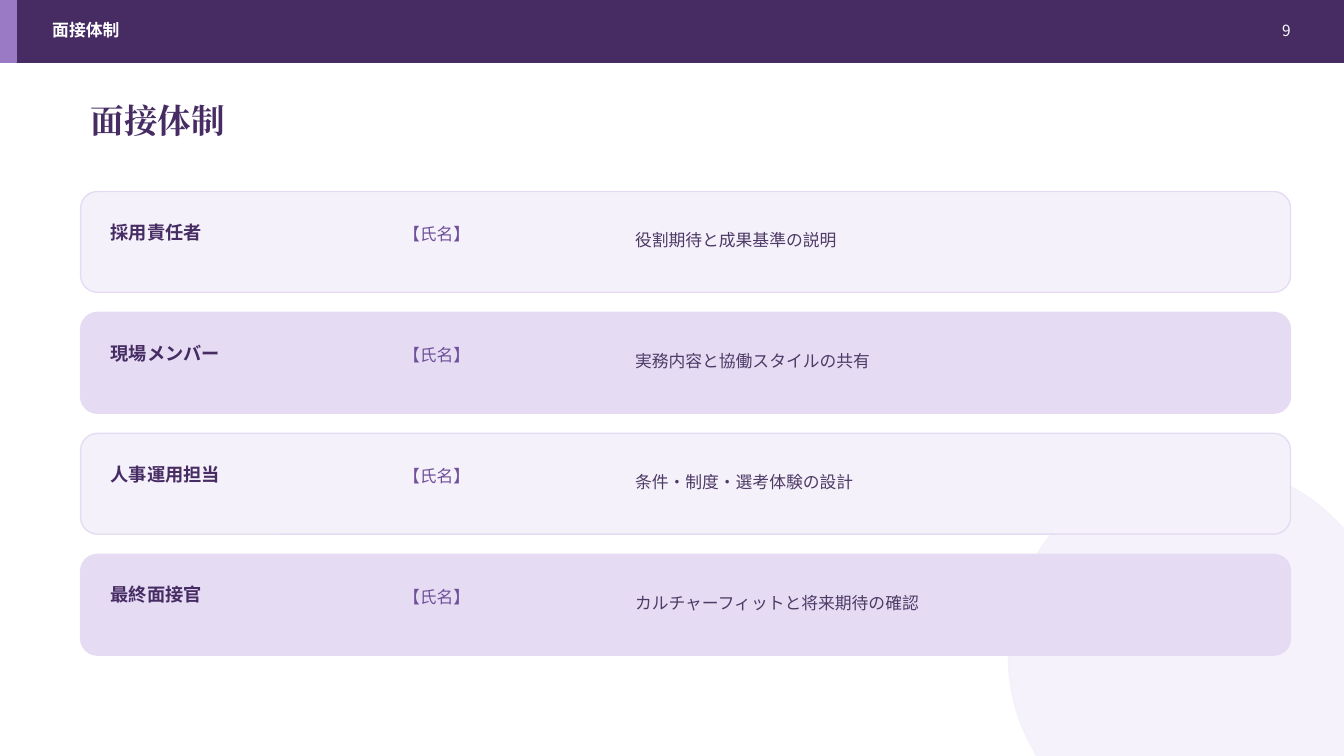
"""Build the interview team slide."""
from lxml.etree import SubElement
from pptx import Presentation
from pptx.dml.color import RGBColor
from pptx.enum.shapes import MSO_SHAPE
from pptx.enum.text import MSO_ANCHOR, MSO_AUTO_SIZE, PP_ALIGN
from pptx.oxml.ns import qn
from pptx.util import Inches, Pt

TITLE = "面接体制"
PAGE = "9"
ROWS = [
    ("採用責任者", "【氏名】", "役割期待と成果基準の説明"),
    ("現場メンバー", "【氏名】", "実務内容と協働スタイルの共有"),
    ("人事運用担当", "【氏名】", "条件・制度・選考体験の設計"),
    ("最終面接官", "【氏名】", "カルチャーフィットと将来期待の確認"),
]
COLORS = {
    "dark": "462C63", "accent": "9A79C5", "pale": "F5F1FB", "lilac": "E5DCF4",
    "name": "70509A", "body": "4D3A65", "white": "FFFFFF",
}
SANS = "Noto Sans CJK JP"
COLUMNS = [
    (1, 0.28, 2.7, 0.24, 13, "dark", True),
    (3.9, 0.3, 2.1, 0.24, 12, "name", False),
    (6.2, 0.25, 6.2, 0.45, 12, "body", False),
]
TOP, STEP = 1.9, 1.2


def color(key):
    return RGBColor.from_string(COLORS[key])


def add_box(slide, kind, area, fill, line):
    box = slide.shapes.add_shape(kind, *map(Inches, area))
    box.shadow.inherit = False
    box.fill.solid()
    box.fill.fore_color.rgb = color(fill)
    box.line.color.rgb = color(line)
    box.line.width = Pt(1)
    return box


def write(shape, text, size, ink, bold=False, font=SANS, align=PP_ALIGN.LEFT):
    frame = shape.text_frame
    frame.word_wrap = True
    frame.auto_size = MSO_AUTO_SIZE.NONE
    frame.vertical_anchor = MSO_ANCHOR.MIDDLE
    para = frame.paragraphs[0]
    para.alignment = align
    run = para.add_run()
    run.text = text
    run.font.name = font
    run.font.size = Pt(size)
    run.font.bold = bold
    run.font.color.rgb = color(ink)
    SubElement(run.font._element, qn("a:ea"), typeface=font)


def add_text(slide, area, *args, **style):
    write(slide.shapes.add_textbox(*map(Inches, area)), *args, **style)


def main():
    deck = Presentation()
    deck.slide_width, deck.slide_height = Inches(13.33), Inches(7.5)
    slide = deck.slides.add_slide(deck.slide_layouts[5])

    circle = add_box(slide, MSO_SHAPE.OVAL, (10, 4.6, 3.8, 3.8), "pale", "pale")
    tint = circle.fill._xPr.find(qn("a:solidFill"))[0]
    SubElement(tint, qn("a:alpha"), val="88000")

    add_box(slide, MSO_SHAPE.RECTANGLE, (0, 0, 13.33, 0.62), "dark", "dark")
    add_box(slide, MSO_SHAPE.RECTANGLE, (0, 0, 0.16, 0.62), "accent", "accent")
    add_text(slide, (0.42, 0.17, 8.8, 0.26), TITLE, 12, "white", bold=True)
    add_text(slide, (12.15, 0.17, 0.75, 0.26), PAGE, 11, "white",
             align=PP_ALIGN.RIGHT)

    title = slide.shapes.title
    title.left, title.top = Inches(0.8), Inches(0.95)
    title.width, title.height = Inches(11.4), Inches(0.48)
    write(title, TITLE, 24, "dark", bold=True, font="Cambria")

    for i, row in enumerate(ROWS):
        top = TOP + i * STEP
        fill = "lilac" if i % 2 else "pale"
        add_box(slide, MSO_SHAPE.ROUNDED_RECTANGLE, (0.8, top, 12, 1),
                fill, "lilac")
        for text, (left, drop, width, height, *style) in zip(row, COLUMNS):
            add_text(slide, (left, top + drop, width, height), text, *style)

    deck.save("out.pptx")


if __name__ == "__main__":
    main()
